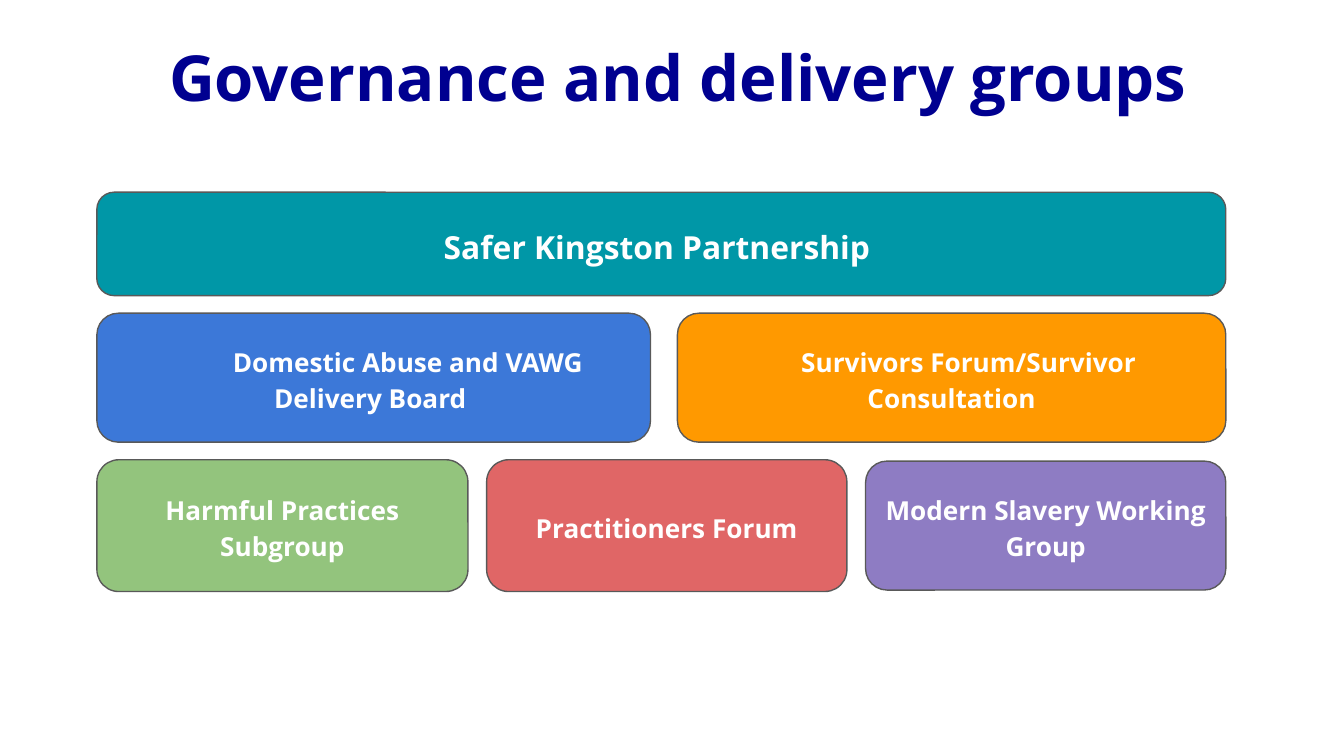
from pptx import Presentation
from pptx.dml.color import RGBColor
from pptx.enum.shapes import MSO_SHAPE
from pptx.enum.text import MSO_ANCHOR, PP_ALIGN
from pptx.util import Pt

TITLE = "Governance and delivery groups"
ROWS = [
    [dict(text="Safer Kingston Partnership ", width=604.8, height=55.4, fill="0097A7", size=17)],
    [
        dict(text="Domestic Abuse and VAWG Delivery Board ", width=296.6, height=69.1,
             fill="3C78D8", indent=36.7),
        dict(text="Survivors Forum/Survivor Consultation", width=293.8, height=69.1,
             fill="FF9900", indent=18.3),
    ],
    [
        dict(text="Harmful Practices Subgroup", width=198.8, height=70.6, fill="93C47D"),
        dict(text="Practitioners Forum", width=193, height=70.6, fill="E06666"),
        dict(text="Modern Slavery Working Group", width=193, height=69.1, fill="8E7CC3"),
    ],
]
LEFT, TOP, TOTAL_WIDTH, ROW_GAP = 51.9, 103, 604.8, 9.4


def color(value):
    return RGBColor.from_string(value)


def write_text(shape, text, size=14, font_color="FFFFFF", align=PP_ALIGN.CENTER,
               line_spacing=1.15, indent=0):
    frame = shape.text_frame
    frame.word_wrap = True
    frame.vertical_anchor = MSO_ANCHOR.MIDDLE
    frame.margin_left = frame.margin_right = Pt(7.2)
    frame.margin_top = frame.margin_bottom = Pt(7.2)
    paragraph = frame.paragraphs[0]
    paragraph.alignment = align
    paragraph.line_spacing = line_spacing
    if indent:
        properties = paragraph._p.get_or_add_pPr()
        properties.set("marL", "0")
        properties.set("indent", str(Pt(indent)))
    run = paragraph.add_run()
    run.text = text
    run.font.name = "Open Sans"
    run.font.size = Pt(size)
    run.font.bold = True
    run.font.color.rgb = color(font_color)


def add_group_box(slide, left, top, width, height, fill, text, **text_format):
    shape = slide.shapes.add_shape(
        MSO_SHAPE.ROUNDED_RECTANGLE, Pt(left), Pt(top), Pt(width), Pt(height))
    shape.shadow.inherit = False
    shape.fill.solid()
    shape.fill.fore_color.rgb = color(fill)
    shape.line.color.rgb = color("595959")
    shape.line.width = Pt(0.75)
    write_text(shape, text, **text_format)


def main():
    presentation = Presentation()
    presentation.slide_width, presentation.slide_height = Pt(720), Pt(405)
    slide = presentation.slides.add_slide(presentation.slide_layouts[6])

    title = slide.shapes.add_textbox(Pt(83.5), Pt(18), Pt(567.4), Pt(46))
    write_text(title, TITLE, size=34, font_color="000090", align=PP_ALIGN.LEFT, line_spacing=1.0)

    top = TOP
    for row in ROWS:
        row_height = max(box["height"] for box in row)
        free_width = TOTAL_WIDTH - sum(box["width"] for box in row)
        column_gap = free_width / max(len(row) - 1, 1)
        left = LEFT
        for box in row:
            add_group_box(slide, left, top + (row_height - box["height"]) / 2, **box)
            left += box["width"] + column_gap
        top += row_height + ROW_GAP

    presentation.save("out.pptx")


if __name__ == "__main__":
    main()
